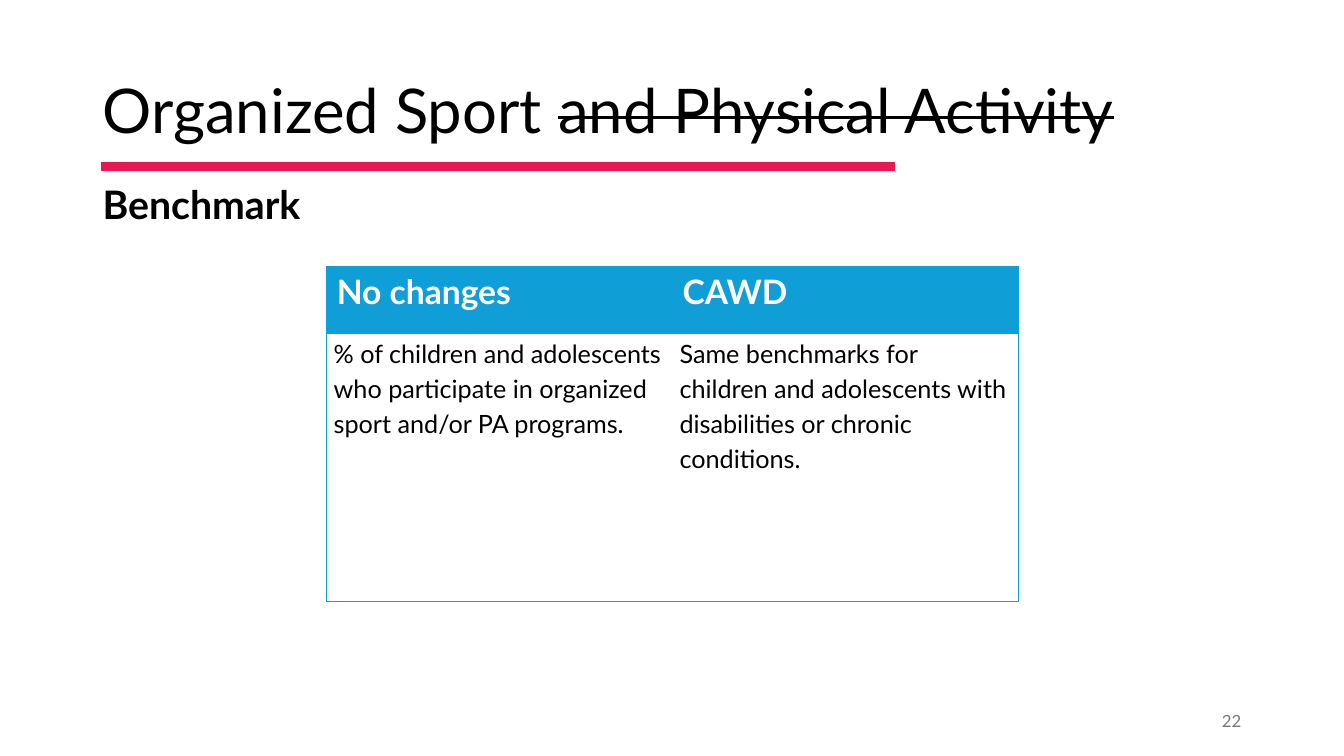
import pptx
import pptx.util
import pptx.dml.color
import pptx.enum.shapes
import pptx.enum.text
from lxml import etree

TITLE = [("Organized Sport ", False), ("and Physical Activity", True)]  # text, struck out
SUBTITLE = "Benchmark"
PAGE = "22"
ROWS = [
    ["No changes", "CAWD"],
    ["% of children and adolescents who participate in organized sport and/or PA programs.",
     "Same benchmarks for children and adolescents with disabilities or chronic conditions."],
]
COLORS = {"text": "000000", "page": "797979", "rule": "EA1656",
          "table": "0F9ED5", "white": "FFFFFF"}
FONT = "Lato"
WIDTH, HEIGHT = 13.33, 7.5
MARGIN = 0.92
TABLE_LEFT, TABLE_TOP = 3.24, 2.64
COLUMN = 3.43
ROW_HEIGHTS = [0.67, 2.66]

Inches, Pt = pptx.util.Inches, pptx.util.Pt
ANCHOR, ALIGN = pptx.enum.text.MSO_ANCHOR, pptx.enum.text.PP_ALIGN
NS = "http://schemas.openxmlformats.org/drawingml/2006/main"


def rgb(name):
    return pptx.dml.color.RGBColor.from_string(COLORS[name])


def add_run(p, text, size, color="text", bold=False):
    r = p.add_run()
    r.text = text
    r.font.name, r.font.size, r.font.bold = FONT, Pt(size), bold
    r.font.color.rgb = rgb(color)
    return r


def add_label(s, box, anchor, align):
    """Add an empty text box and return its first paragraph."""
    tf = s.shapes.add_textbox(*map(Inches, box)).text_frame
    tf.word_wrap = True
    tf.vertical_anchor = anchor
    tf.paragraphs[0].alignment = align
    return tf.paragraphs[0]


def set_borders(cell, drawn):
    """Draw the sides named in drawn; leave the others blank."""
    tcPr = cell._tc.get_or_add_tcPr()
    for side in "LRTB":
        ln = etree.SubElement(tcPr, f"{{{NS}}}ln{side}", w=str(Pt(1)))
        if side in drawn:
            fill = etree.SubElement(ln, f"{{{NS}}}solidFill")
            etree.SubElement(fill, f"{{{NS}}}srgbClr", val=COLORS["table"])
        else:
            etree.SubElement(ln, f"{{{NS}}}noFill")


def add_title(s):
    sp = s.shapes.title
    sp.left, sp.top, sp.width, sp.height = map(
        Inches, (MARGIN, 0.4, WIDTH - 2 * MARGIN, 1.45))
    tf = sp.text_frame
    tf.vertical_anchor = ANCHOR.MIDDLE
    tf.auto_size = pptx.enum.text.MSO_AUTO_SIZE.NONE
    p = tf.paragraphs[0]
    p.alignment, p.line_spacing = ALIGN.LEFT, 0.9
    for text, struck in TITLE:
        r = add_run(p, text, 44)
        if struck:
            r._r.get_or_add_rPr().set("strike", "sngStrike")


def add_rule(s):
    line = s.shapes.add_connector(pptx.enum.shapes.MSO_CONNECTOR.STRAIGHT,
                                  *map(Inches, (1, 1.65, 8.88, 1.65)))
    line.line.color.rgb = rgb("rule")
    line.line.width = Pt(6)
    etree.SubElement(line._element.spPr, f"{{{NS}}}effectLst")


def add_benchmarks(s):
    n_rows, n_cols = len(ROWS), len(ROWS[0])
    table = s.shapes.add_table(n_rows, n_cols, *map(Inches, (
        TABLE_LEFT, TABLE_TOP, n_cols * COLUMN, sum(ROW_HEIGHTS)))).table
    table.horz_banding = False
    for column in table.columns:
        column.width = Inches(COLUMN)
    for i, texts in enumerate(ROWS):
        table.rows[i].height = Inches(ROW_HEIGHTS[i])
        header = i == 0
        for j, text in enumerate(texts):
            cell = table.cell(i, j)
            set_borders(cell, "T" + ("L" if j == 0 else "")
                        + ("R" if j == n_cols - 1 else "")
                        + ("B" if i == n_rows - 1 else ""))
            cell.fill.solid()
            cell.fill.fore_color.rgb = rgb("table" if header else "white")
            p = cell.text_frame.paragraphs[0]
            if header:
                add_run(p, text, 24, "white", True)
            else:
                cell.margin_left = cell.margin_right = Inches(0.07)
                cell.margin_top = cell.margin_bottom = 0
                p.line_spacing, p.space_after = 1.16, Pt(8)
                add_run(p, text, 18)


def main():
    prs = pptx.Presentation()
    prs.slide_width, prs.slide_height = Inches(WIDTH), Inches(HEIGHT)
    s = prs.slides.add_slide(prs.slide_layouts[5])
    add_title(s)
    add_rule(s)
    add_run(add_label(s, (MARGIN, 1.74, 2.81, 0.57), ANCHOR.TOP, ALIGN.LEFT),
            SUBTITLE, 28, bold=True)
    add_benchmarks(s)
    add_run(add_label(s, (WIDTH - MARGIN - 3, 6.95, 3, 0.4), ANCHOR.MIDDLE, ALIGN.RIGHT),
            PAGE, 12, "page")
    prs.save("out.pptx")


if __name__ == "__main__":
    main()
